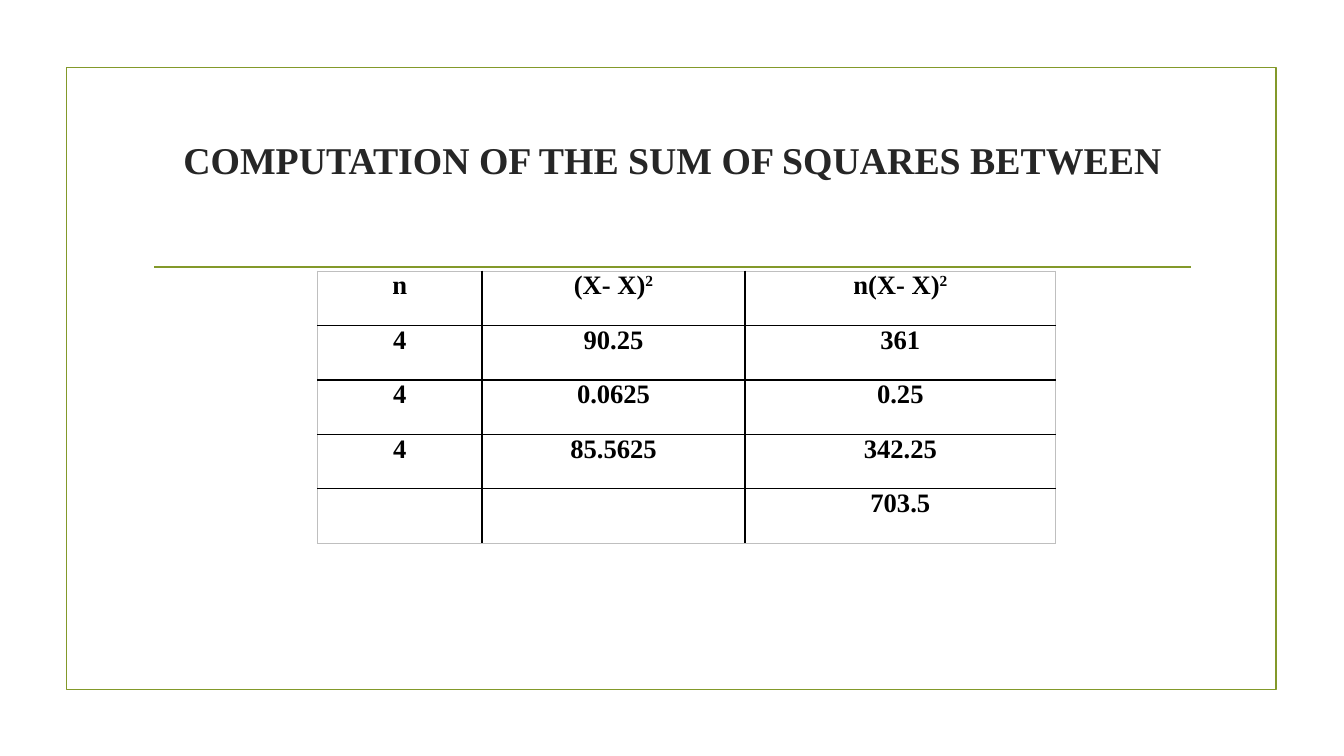
from lxml import etree
from pptx import Presentation
from pptx.dml.color import RGBColor
from pptx.enum.shapes import MSO_CONNECTOR, MSO_SHAPE
from pptx.enum.text import MSO_ANCHOR, MSO_AUTO_SIZE, PP_ALIGN
from pptx.oxml.ns import qn
from pptx.util import Inches, Pt

CENTER = PP_ALIGN.CENTER
MIDDLE = MSO_ANCHOR.MIDDLE
TOP = MSO_ANCHOR.TOP
NO_FIT = MSO_AUTO_SIZE.NONE
RECTANGLE = MSO_SHAPE.RECTANGLE
STRAIGHT = MSO_CONNECTOR.STRAIGHT

COLORS = {"olive": "83992A", "title": "262626", "ink": "000000", "edge": "BFBFBF"}
FONT = "Times New Roman"


def add_text(para, text, size=19, color="ink", raised=False):
    para.alignment = CENTER
    span = para.add_run()
    span.text = text
    span.font.name = FONT
    span.font.size = Pt(size)
    span.font.bold = True
    span.font.color.rgb = RGBColor.from_string(COLORS[color])
    if raised:
        span.font._element.set("baseline", "30000")


def add_border(cell, side, color):
    properties = cell._tc.get_or_add_tcPr()
    line = etree.SubElement(properties, qn(f"a:ln{side}"), w=str(Pt(1)))
    fill = etree.SubElement(line, qn("a:solidFill"))
    etree.SubElement(fill, qn("a:srgbClr"), val=COLORS[color])


deck = Presentation()
deck.slide_width = Inches(13.33)
deck.slide_height = Inches(7.5)
page = deck.slides.add_slide(deck.slide_layouts[5])
olive = RGBColor.from_string(COLORS["olive"])

frame = page.shapes.add_shape(RECTANGLE, Inches(0.66), Inches(0.67), Inches(12), Inches(6.17))
frame.shadow.inherit = False
frame.fill.background()
frame.line.color.rgb = olive
frame.line.width = Pt(1.25)

rule = page.shapes.add_connector(STRAIGHT, Inches(1.53), Inches(2.65), Inches(11.81), Inches(2.65))
rule.line.color.rgb = olive
rule.line.width = Pt(1.25)
etree.SubElement(rule._element.spPr, qn("a:effectLst"))

title = page.shapes.title
title.left, title.top = Inches(1.42), Inches(1.07)
title.width, title.height = Inches(10.5), Inches(1.43)
title_box = title.text_frame
title_box.word_wrap = True
title_box.auto_size = NO_FIT
title_box.vertical_anchor = MIDDLE
title_box.margin_bottom = Inches(0.46)
add_text(title_box.paragraphs[0], "COMPUTATION OF THE SUM OF SQUARES BETWEEN", size=27, color="title")

rows = [
    ["n", "(X- X)²", "n(X- X)²"],
    ["4", "90.25", "361"],
    ["4", "0.0625", "0.25"],
    ["4", "85.5625", "342.25"],
    ["", "", "703.5"],
]
widths = [1.63, 2.61, 3.08]
last_row, last_column = len(rows) - 1, len(widths) - 1

table = page.shapes.add_table(
    len(rows), len(widths), Inches(3.15), Inches(2.69), Inches(sum(widths)), Inches(0.54 * len(rows))
).table
table.first_row = False
table.horz_banding = False
for column, width in zip(table.columns, widths):
    column.width = Inches(width)

for row_index, row in enumerate(rows):
    table.rows[row_index].height = Inches(0.54)
    for column_index, text in enumerate(row):
        cell = table.cell(row_index, column_index)
        cell.margin_left = cell.margin_right = Inches(0.06)
        cell.margin_top = cell.margin_bottom = 0
        cell.vertical_anchor = TOP
        outer_sides = {
            "L": column_index == 0,
            "R": column_index == last_column,
            "T": row_index == 0,
            "B": row_index == last_row,
        }
        for side, outer in outer_sides.items():
            add_border(cell, side, "edge" if outer else "ink")
        cell.fill.background()
        para = cell.text_frame.paragraphs[0]
        if text:
            add_text(para, text.removesuffix("²"))
        if text.endswith("²"):
            add_text(para, "2", raised=True)

deck.save("out.pptx")
